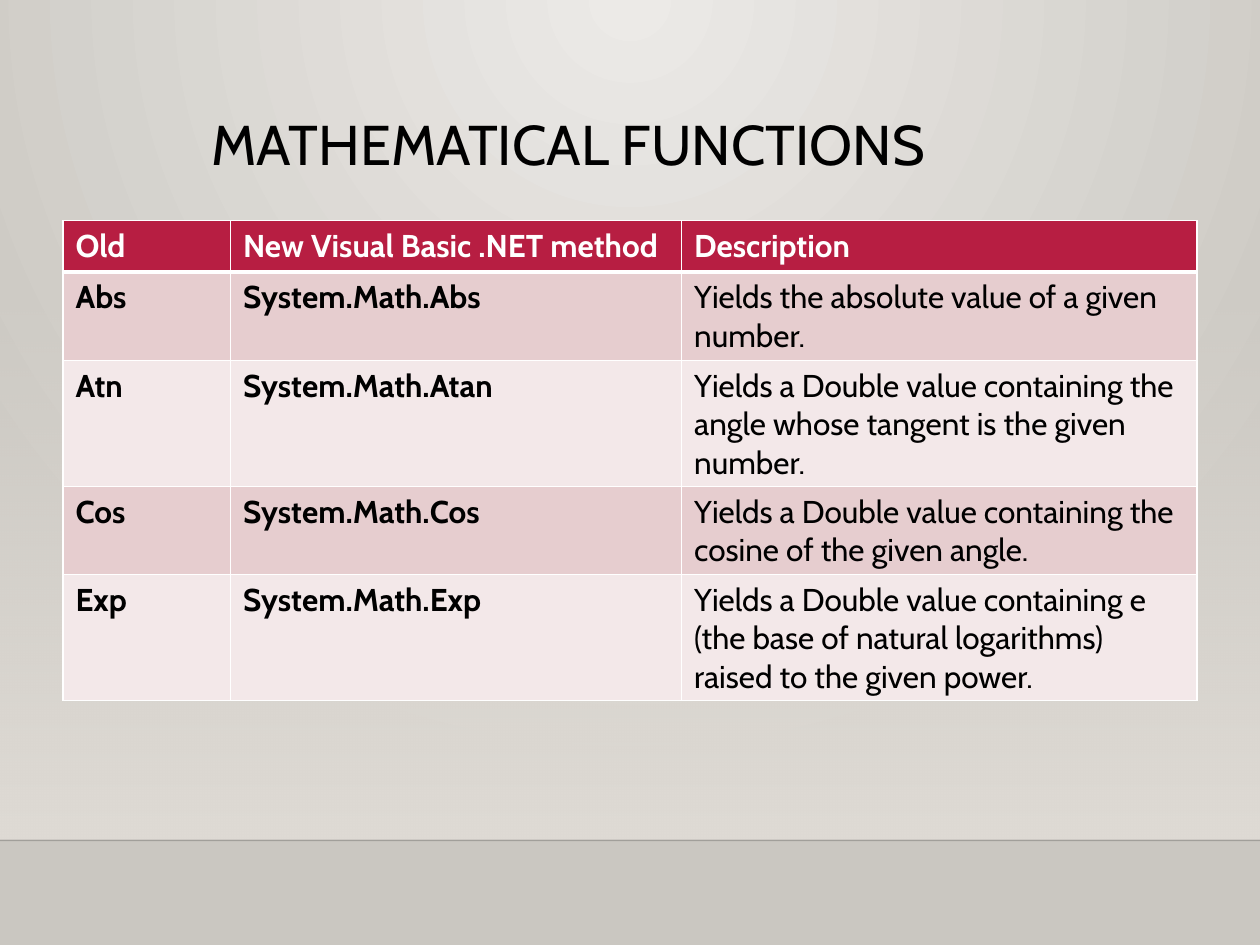
from dataclasses import dataclass

from lxml import etree
from pptx import Presentation
from pptx.dml.color import RGBColor
from pptx.enum import shapes, text
from pptx.oxml import parse_xml
from pptx.oxml.ns import nsdecls, qn
from pptx.util import Inches, Pt


@dataclass(frozen=True)
class Theme:
    font: str = "Cabin"
    title_size: int = 32
    cell_size: int = 18
    ink: str = "000000"
    white: str = "FFFFFF"
    header: str = "B71E42"
    bands: tuple = ("E6CDCF", "F3E8E9")
    wall: tuple = (("ECEAE7", 100), ("CAC7C1", 100))
    haze: tuple = (("DFDBD5", 0), ("DFDBD5", 100))
    floor_line: str = "000001"


THEME = Theme()
COLUMNS = (1.33, 3.58, 4.09)
ROW_HEIGHT = 0.41
ROWS = (
    ("Old", "New Visual Basic .NET method", "Description"),
    ("Abs", "System.Math.Abs", "Yields the absolute value of a given number."),
    ("Atn", "System.Math.Atan",
     "Yields a Double value containing the angle whose tangent is the given number."),
    ("Cos", "System.Math.Cos",
     "Yields a Double value containing the cosine of the given angle."),
    ("Exp", "System.Math.Exp",
     "Yields a Double value containing e (the base of natural logarithms) "
     "raised to the given power."),
)
LINEAR_DOWN = '<a:lin ang="5400000" scaled="0"/>'
CIRCLE_FROM_TOP = ('<a:path path="circle">'
                   '<a:fillToRect l="43000" t="0" r="43000" b="100000"/></a:path>')


def set_gradient(owner, fill, stops, direction):
    fill.gradient()
    old = next(owner.element.iter(qn("a:gradFill")))
    marks = "".join(
        f'<a:gs pos="{i * 100000}"><a:srgbClr val="{color}">'
        f'<a:alpha val="{alpha * 1000}"/></a:srgbClr></a:gs>'
        for i, (color, alpha) in enumerate(stops))
    new = parse_xml(f'<a:gradFill {nsdecls("a")} rotWithShape="1">'
                    f'<a:gsLst>{marks}</a:gsLst>{direction}</a:gradFill>')
    old.getparent().replace(old, new)


def style_run(p, size, color, bold=False):
    r = p.runs[0]
    r.font.name = THEME.font
    r.font.size = Pt(size)
    r.font.bold = bold
    r.font.color.rgb = RGBColor.from_string(color)


def add_haze(s):
    sp = s.shapes.add_shape(shapes.MSO_SHAPE.RECTANGLE,
                            Inches(0), Inches(2.2), Inches(10), Inches(4.46))
    sp.shadow.inherit = False
    sp.line.fill.background()
    set_gradient(sp, sp.fill, THEME.haze, LINEAR_DOWN)


def add_floor_line(s):
    line = s.shapes.add_connector(shapes.MSO_CONNECTOR.STRAIGHT,
                                  Inches(0), Inches(6.67), Inches(10), Inches(6.67))
    line.line.width = Pt(1)
    line.line.color.rgb = RGBColor.from_string(THEME.floor_line)
    color = next(line.element.iter(qn("a:srgbClr")))
    etree.SubElement(color, qn("a:alpha")).set("val", "20000")
    etree.SubElement(line.element.spPr, qn("a:effectLst"))


def add_title(s, title):
    sp = s.shapes.add_textbox(Inches(1.58), Inches(0.88), Inches(7.19), Inches(1.15))
    tf = sp.text_frame
    tf.word_wrap = True
    tf.vertical_anchor = text.MSO_ANCHOR.TOP
    tf.text = title
    p = tf.paragraphs[0]
    p.line_spacing = 0.9
    style_run(p, THEME.title_size, THEME.ink)


def set_borders(cell, bottom):
    tc_pr = cell._tc.get_or_add_tcPr()
    for side, width in (("L", 1), ("R", 1), ("T", 1), ("B", bottom)):
        tc_pr.append(parse_xml(
            f'<a:ln{side} {nsdecls("a")} w="{Pt(width)}"><a:solidFill>'
            f'<a:srgbClr val="{THEME.white}"/></a:solidFill></a:ln{side}>'))


def fill_cell(cell, value, row, col):
    is_header = row == 0
    set_borders(cell, 3 if is_header else 1)
    cell.fill.solid()
    color = THEME.header if is_header else THEME.bands[(row - 1) % 2]
    cell.fill.fore_color.rgb = RGBColor.from_string(color)
    cell.text_frame.text = value
    style_run(cell.text_frame.paragraphs[0], THEME.cell_size,
              THEME.white if is_header else THEME.ink, is_header or col < 2)


def add_function_table(s):
    frame = s.shapes.add_table(len(ROWS), len(COLUMNS), Inches(0.5), Inches(1.75),
                               Inches(sum(COLUMNS)), Inches(ROW_HEIGHT * len(ROWS)))
    table = frame.table
    for column, width in zip(table.columns, COLUMNS):
        column.width = Inches(width)
    for row, values in enumerate(ROWS):
        table.rows[row].height = Inches(ROW_HEIGHT)
        for col, value in enumerate(values):
            fill_cell(table.cell(row, col), value, row, col)


def main():
    prs = Presentation()
    prs.slide_width, prs.slide_height = Inches(10), Inches(7.5)
    s = prs.slides.add_slide(prs.slide_layouts[6])
    set_gradient(s, s.background.fill, THEME.wall, CIRCLE_FROM_TOP)
    add_haze(s)
    add_floor_line(s)
    add_title(s, "MATHEMATICAL FUNCTIONS")
    add_function_table(s)
    prs.save("out.pptx")


if __name__ == "__main__":
    main()
